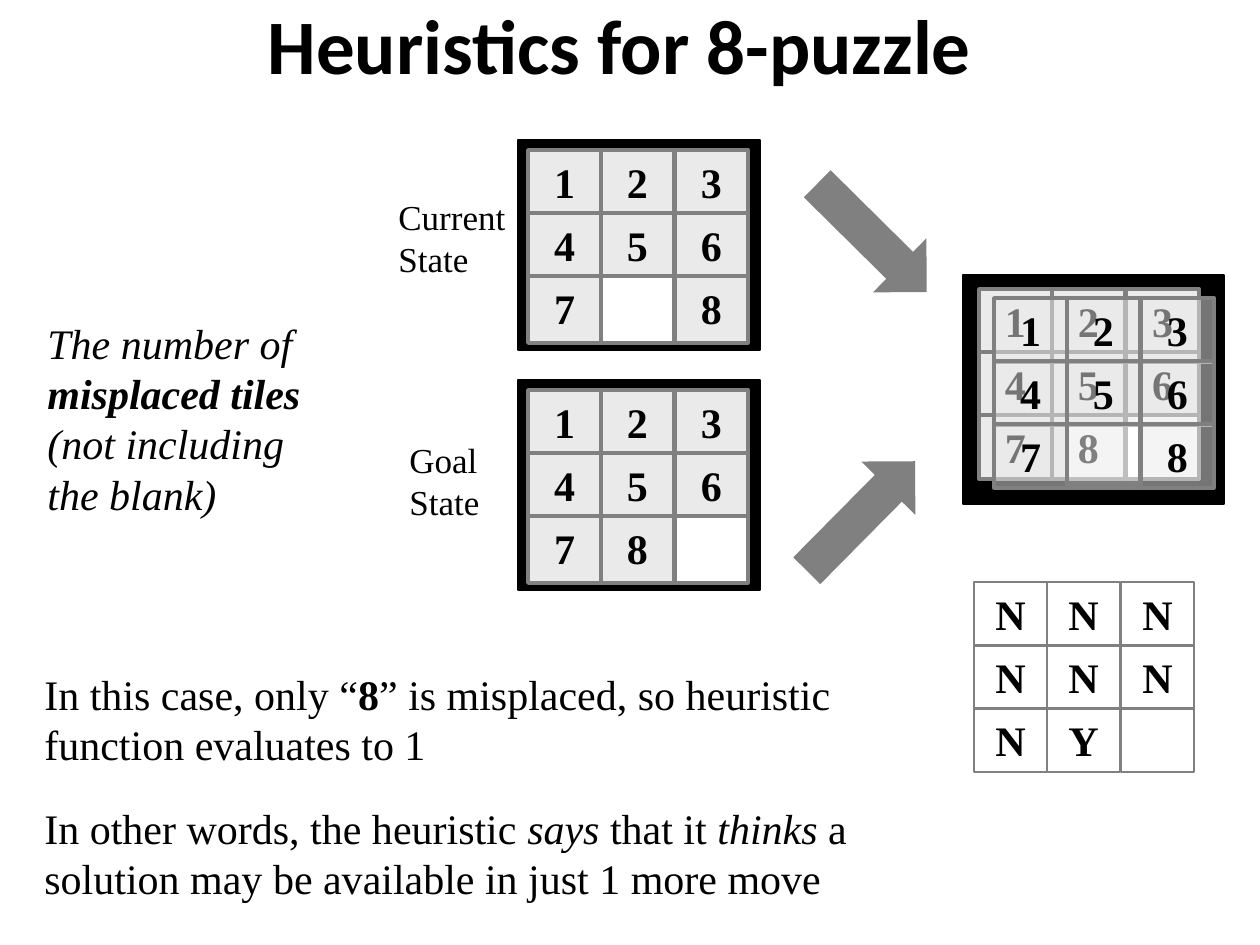
from dataclasses import dataclass
from lxml.etree import SubElement
from pptx import Presentation
from pptx.dml.color import RGBColor as RGB
from pptx.enum.shapes import MSO_SHAPE as SHAPE
from pptx.enum.text import MSO_ANCHOR as ANCHOR, PP_ALIGN as ALIGN
from pptx.oxml.ns import qn
from pptx.util import Emu, Pt


@dataclass(frozen=True)
class Theme:
    ink: RGB = RGB(0, 0, 0)
    gray: RGB = RGB(0x80, 0x80, 0x80)
    tile: RGB = RGB(0xEA, 0xEA, 0xEA)
    blank: RGB = RGB(0xFF, 0xFF, 0xFF)
    head: str = "Calibri"
    body: str = "Times New Roman"
    title: int = 44
    text: int = 24
    label: int = 20


T = Theme()


def px(*values):
    return [Emu(round(v * 914400 / 126)) for v in values]


def write(tf, paras, size=T.text, font=T.body, bold=False, align=ALIGN.LEFT,
          anchor=ANCHOR.TOP, gap=0):
    tf.word_wrap = True
    tf.vertical_anchor = anchor
    for i, runs in enumerate(paras):
        p = tf.paragraphs[0] if i == 0 else tf.add_paragraph()
        p.alignment = align
        p.space_before = Pt(gap if i else 0)
        for text, style in runs:
            r = p.add_run()
            r.text = text
            r.font.name, r.font.size = font, Pt(size)
            r.font.bold = bold or "b" in style
            r.font.italic = "i" in style
            r.font.color.rgb = T.ink


prs = Presentation()
prs.slide_width, prs.slide_height = px(1260, 945)
slide = prs.slides.add_slide(prs.slide_layouts[5])
shapes = slide.shapes

title = shapes.title
title.left, title.top, title.width, title.height = px(93, -35, 1071, 157)
write(title.text_frame, [[("Heuristics for 8-puzzle ", "")]], size=T.title, font=T.head,
      bold=True, align=ALIGN.CENTER, anchor=ANCHOR.MIDDLE)

frames = [(518, 140, 242, 210), (518, 380, 242, 210), (963, 275, 261, 229)]
for box in frames:
    s = shapes.add_shape(SHAPE.RECTANGLE, *px(*box))
    s.shadow.inherit = False
    s.fill.solid()
    s.fill.fore_color.rgb = T.ink
    s.line.color.rgb = T.ink
    s.line.width = Pt(0.75)

current, goal, misplaced = "1234567 8", "12345678 ", "NNNNNNNY "
boards = [
    (current, 528, 150, 67, 2, 100),
    (goal, 528, 390, 67, 2, 100),
    (goal, 979, 289, 64, 2, 100),
    (current, 994, 298, 64, 2, 50),
    (misplaced, 974, 582, 64, 0.75, 0),
]
for marks, left, top, height, line, opacity in boards:
    grp = shapes.add_group_shape()
    for i in sorted(range(9), key=lambda n: marks[n] == " "):
        row, col = divmod(i, 3)
        s = grp.shapes.add_shape(
            SHAPE.RECTANGLE, *px(left + col * 147 // 2, top + row * 63, 73, height))
        s.shadow.inherit = False
        s.line.color.rgb = T.gray
        s.line.width = Pt(line)
        if opacity:
            s.fill.solid()
            s.fill.fore_color.rgb = T.blank if marks[i] == " " else T.tile
        else:
            s.fill.background()
        if 0 < opacity < 100:
            color = s._element.spPr.find(".//" + qn("a:srgbClr"))
            SubElement(color, qn("a:alpha")).set("val", str(opacity * 1000))
        if marks[i] != " ":
            write(s.text_frame, [[(marks[i], "")]], bold=True, align=ALIGN.CENTER)

for left, top, angle in [(795, 200, 44.7), (784, 478, 314.7)]:
    s = shapes.add_shape(SHAPE.RIGHT_ARROW, *px(left, top, 154, 76))
    s.shadow.inherit = False
    s.rotation = angle
    s.adjustments[0], s.adjustments[1] = 0.5, 0.5
    s.fill.solid()
    s.fill.fore_color.rgb = T.gray
    s.line.fill.background()

texts = [
    ((35, 311, 295, 217), T.text, [
        [("The number of ", "i"), ("misplaced tiles", "bi"), (" (not including the blank)", "i")],
    ]),
    ((32, 662, 903, 251), T.text, [
        [("In this case, only “", ""), ("8", "b"),
         ("” is misplaced, so heuristic function evaluates to 1", "")],
        [("In other words, the heuristic ", ""), ("says", "i"), (" that it ", ""),
         ("thinks", "i"), (" a solution may be available in just 1 more move", "")],
    ]),
    ((397, 432, 146, 97), T.label, [[("Goal State", "")]]),
    ((386, 189, 164, 97), T.label, [[("Current State", "")]]),
]
for box, size, paras in texts:
    write(shapes.add_textbox(*px(*box)).text_frame, paras, size=size, gap=19)

prs.save("out.pptx")
